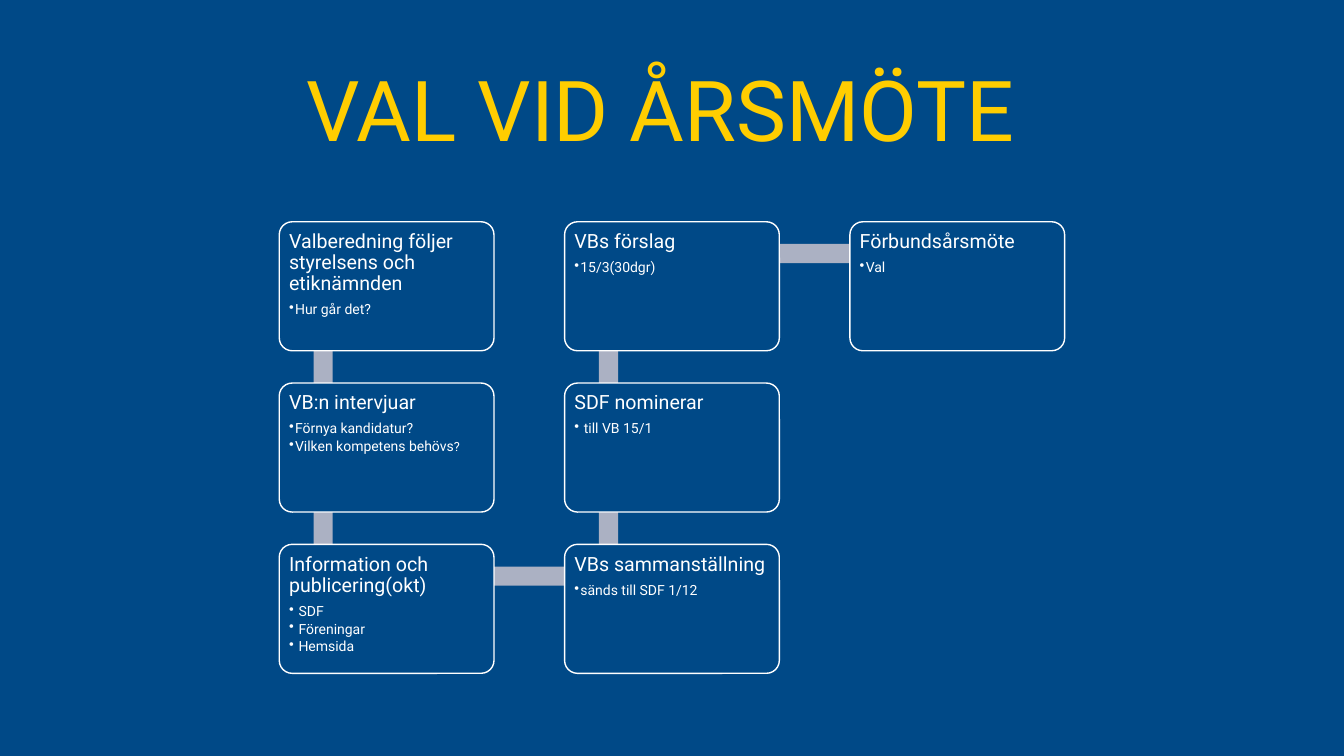
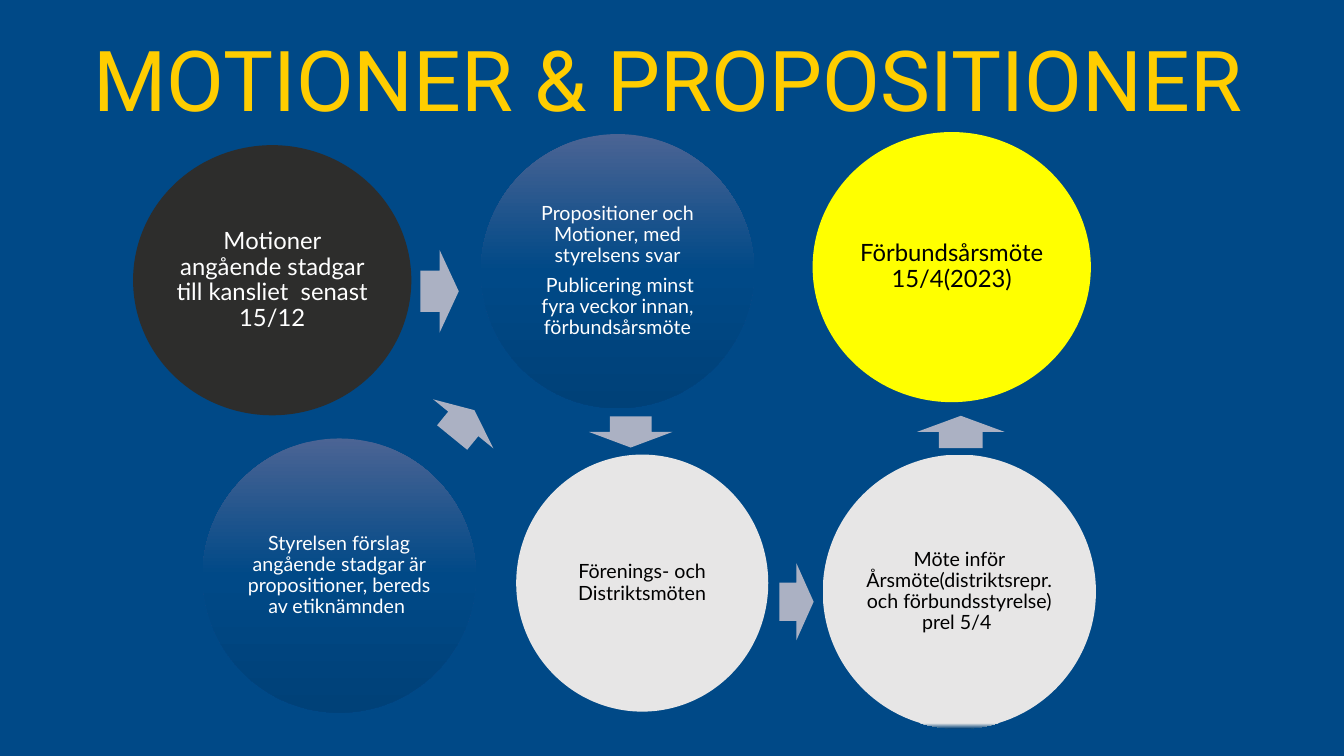
from copy import deepcopy

from lxml import etree
from pptx import Presentation
from pptx import util as u
from pptx.dml.color import RGBColor
from pptx.enum import shapes, text
from pptx.oxml.ns import qn

PX = 9144  # 100 px to the inch
BLUE, GOLD, GREY, WHITE, BLACK = "004987", "FFCD00", "ABB1C3", "FFFFFF", "000000"
DARK, PALE, YELLOW = "2D2D2C", "E7E6E6", "FFFF00"
FADE = [(0, "4B6494"), (0.5, BLUE), (1, "004178")]
RIM = [(0, PALE), (0.98, PALE), (1, "004178")]
FORM = shapes.MSO_SHAPE
ALIGN, ANCHOR = text.PP_ALIGN, text.MSO_ANCHOR

# Slide 1: heading and bullets of each card, in reading order of the flow;
# text after "|" is set one size smaller
CARDS = [
    ("Valberedning följer styrelsens och etiknämnden", ["Hur går det?"]),
    ("VB:n intervjuar", ["Förnya kandidatur?", "Vilken kompetens behövs|?"]),
    ("Information och publicering(okt)", [" SDF", " Föreningar", " Hemsida"]),
    ("VBs sammanställning", ["sänds till SDF 1/12"]),
    ("SDF nominerar", [" till VB 15/1"]),
    ("VBs förslag", ["15/3(30dgr)"]),
    ("Förbundsårsmöte", ["Val"]),
]
ROWS, LEFT, TOP = 3, 277, 220
CARD_W, CARD_H, STEP_X, STEP_Y, BAR = 213, 128, 283, 160, 19

# Slide 2: box, fill, text colour, size, paragraphs
DISCS = [
    ((132, 144, 276, 268), DARK, WHITE, 17,
     ["Motioner angående stadgar till kansliet  senast 15/12"]),
    ((201, 435, 271, 272), FADE, WHITE, 14,
     ["Styrelsen förslag angående stadgar är propositioner, bereds av etiknämnden "]),
    ((477, 133, 271, 272), FADE, WHITE, 14,
     ["Propositioner och Motioner, med styrelsens svar",
      " Publicering minst fyra veckor innan, förbundsårsmöte"]),
    ((512, 451, 250, 255), PALE, BLACK, 14, ["Förenings- och Distriktsmöten"]),
    ((816, 451, 271, 272), RIM, BLACK, 14,
     ["Möte inför Årsmöte(distriktsrepr. och förbundsstyrelse) prel 5/4 "]),
    ((806, 131, 276, 268), YELLOW, BLACK, 17, ["Förbundsårsmöte 15/4(2023)"]),
]
# Box and turn of each arrow
ARROWS = [
    ((417, 248, 38, 82), 0),
    ((442, 382, 35, 77), 309.2),
    ((610, 387, 31, 83), 90),
    ((937, 385, 32, 87), 270),
    ((773, 559, 34, 76), 0),
]


def rgb(code):
    return RGBColor.from_string(code)


def put(obj, vals):
    for key, val in vals.items():
        setattr(obj, key, val)


def place(box):
    return [v * PX for v in box]


def paint(shape, fill):
    """Fill with one colour or with a downward list of stops."""
    if isinstance(fill, str):
        shape.fill.solid()
        shape.fill.fore_color.rgb = rgb(fill)
        return
    shape.fill.gradient()
    shape.fill.gradient_angle = 270
    stops = shape._element.spPr.find(qn("a:gradFill")).find(qn("a:gsLst"))
    while len(stops) < len(fill):
        stops.append(deepcopy(stops[0]))
    for stop, (pos, code) in zip(shape.fill.gradient_stops, fill):
        stop.color.rgb = rgb(code)
        stop.position = pos


def draw(slide, form, box, fill, edge=None):
    shape = slide.shapes.add_shape(form, *place(box))
    shape.shadow.inherit = False
    paint(shape, fill)
    if edge:
        shape.line.color.rgb = rgb(edge)
        shape.line.width = u.Pt(1)
    else:
        shape.line.fill.background()
    return shape


def frame(shape, inset, anchor):
    sides = ("left", "top", "right", "bottom")
    put(shape.text_frame, {f"margin_{s}": inset * PX for s in sides})
    put(shape.text_frame, {"word_wrap": True, "vertical_anchor": anchor,
                           "auto_size": text.MSO_AUTO_SIZE.NONE})
    return shape.text_frame


def write(para, line, size, font, color, align, after=0, bullet=False):
    if bullet:
        props = para._p.get_or_add_pPr()
        put_at = {"marL": 6 * PX, "indent": -6 * PX}
        for key, val in put_at.items():
            props.set(key, str(val))
        etree.SubElement(props, qn("a:buChar")).set("char", "•")
    put(para, {"alignment": align, "line_spacing": 0.9,
               "space_before": u.Pt(0), "space_after": u.Pt(after)})
    for step, part in enumerate(line.split("|")):
        run = para.add_run()
        run.text = part
        put(run.font, {"size": u.Pt(size - step), "name": font})
        run.font.color.rgb = rgb(color)


def start(deck, name, box):
    """Add a slide with the shared title style."""
    slide = deck.slides.add_slide(deck.slide_layouts[5])
    title = slide.shapes.title
    put(title, dict(zip(("left", "top", "width", "height"), place(box))))
    body = frame(title, 5, ANCHOR.MIDDLE)
    write(body.paragraphs[0], name, 60, "Roboto", GOLD, ALIGN.CENTER)
    return slide


def spot(i):
    """Left and top of card i: down, up, down."""
    col, row = divmod(i, ROWS)
    if col % 2:
        row = ROWS - 1 - row
    return LEFT + col * STEP_X, TOP + row * STEP_Y


def election(deck):
    slide = start(deck, "VAL VID ÅRSMÖTE", (276, 74, 758, 78))
    spots = [spot(i) for i in range(len(CARDS))]

    # Bars behind the cards
    for (x, y), (next_x, next_y) in zip(spots, spots[1:]):
        if x == next_x:
            box = (x + 34, min(y, next_y) + 32, BAR, STEP_Y)
        else:
            box = (x + 44, y + 22, STEP_X, BAR)
        draw(slide, FORM.RECTANGLE, box, GREY)

    # Cards
    for (x, y), (head, items) in zip(spots, CARDS):
        card = draw(slide, FORM.ROUNDED_RECTANGLE, (x, y, CARD_W, CARD_H), BLUE, WHITE)
        card.adjustments[0] = 0.1
        body = frame(card, 6, ANCHOR.TOP)
        write(body.paragraphs[0], head, 14, "Roboto", WHITE, ALIGN.LEFT, 5.5)
        for item in items:
            write(body.add_paragraph(), item, 10, "Roboto", WHITE, ALIGN.LEFT, 1.8, True)


def motions(deck):
    slide = start(deck, "MOTIONER & PROPOSITIONER", (0, 40, 1325, 87))

    # Discs
    for box, fill, color, size, lines in DISCS:
        body = frame(draw(slide, FORM.OVAL, box, fill), 2, ANCHOR.MIDDLE)
        for i, line in enumerate(lines):
            para = body.add_paragraph() if i else body.paragraphs[0]
            write(para, line, size, "Lato", color, ALIGN.CENTER, 5.8)

    # Arrows
    for box, turn in ARROWS:
        draw(slide, FORM.RIGHT_ARROW, box, GREY).rotation = turn


def main():
    deck = Presentation()
    put(deck, {"slide_width": 1333 * PX, "slide_height": 750 * PX})
    paint(deck.slide_master.background, BLUE)
    election(deck)
    motions(deck)
    deck.save("out.pptx")


if __name__ == "__main__":
    main()
